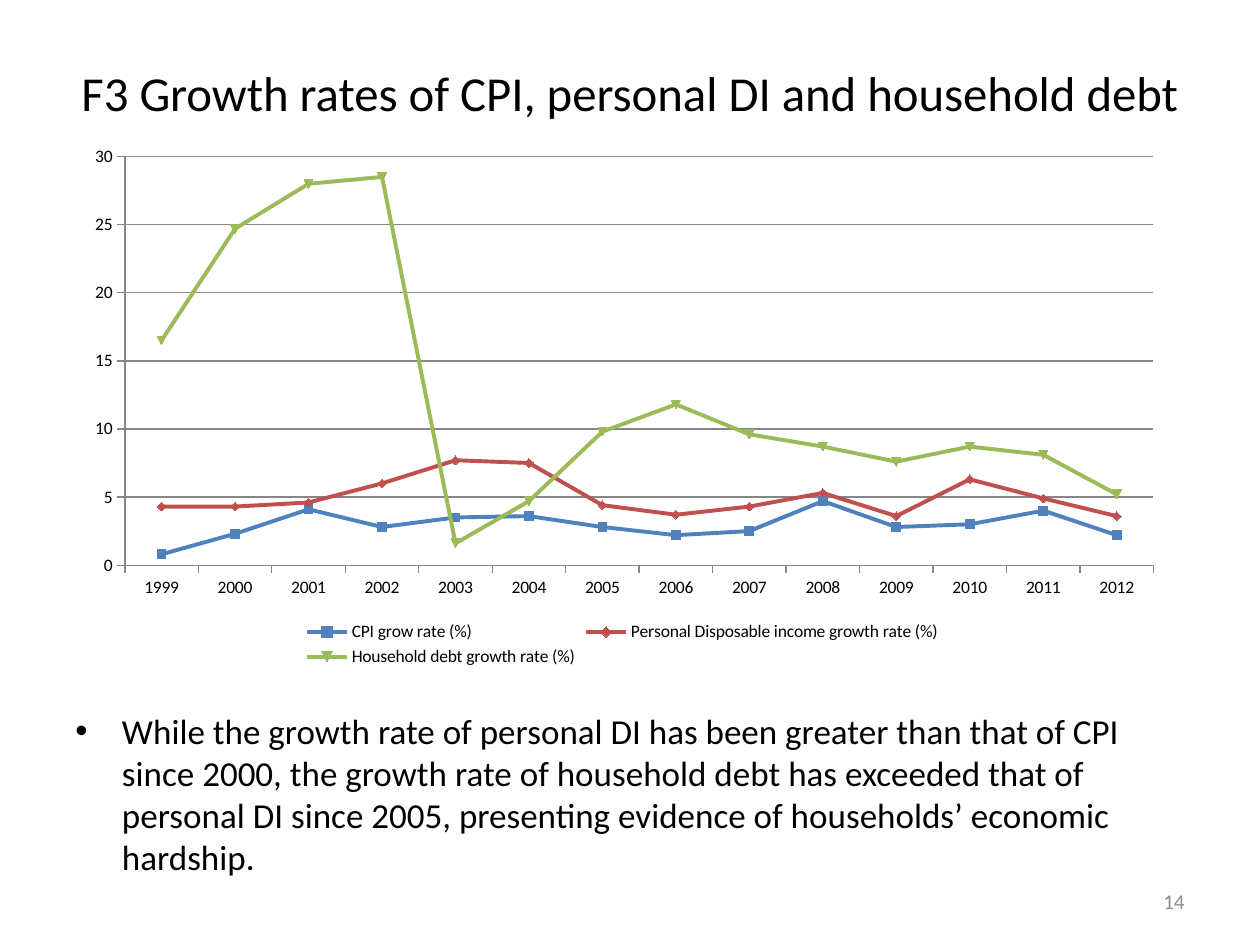
"""Build a slide with a line chart of growth rates and one bullet of comment."""
from dataclasses import dataclass

from lxml import etree
from pptx import Presentation
from pptx.chart.data import CategoryChartData
from pptx.dml.color import RGBColor
from pptx.enum.chart import XL_CHART_TYPE, XL_LEGEND_POSITION, XL_TICK_MARK
from pptx.enum.text import MSO_ANCHOR, PP_ALIGN
from pptx.oxml.ns import qn
from pptx.util import Emu, Inches, Pt

LINE_MARKERS = XL_CHART_TYPE.LINE_MARKERS
LEGEND_BOTTOM = XL_LEGEND_POSITION.BOTTOM
TICK_OUTSIDE = XL_TICK_MARK.OUTSIDE
TOP, MIDDLE = MSO_ANCHOR.TOP, MSO_ANCHOR.MIDDLE
LEFT, CENTER, RIGHT = PP_ALIGN.LEFT, PP_ALIGN.CENTER, PP_ALIGN.RIGHT
SLIDE_WIDTH, SLIDE_HEIGHT = Inches(10), Inches(7.5)


@dataclass(frozen=True)
class Theme:
    font: str = "Calibri"
    ink: str = "000000"
    muted: str = "8C8C8C"
    rule: str = "868686"
    title_size: float = 27.9
    body_size: float = 20
    number_size: float = 12
    chart_size: float = 10
    line_width: float = 2.25
    rule_width: float = 0.75
    bullet_indent: float = 0.37


@dataclass(frozen=True)
class Area:
    """A rectangle in inches on the slide."""
    left: float
    top: float
    width: float
    height: float

    def emu(self) -> tuple[Emu, Emu, Emu, Emu]:
        return (Inches(self.left), Inches(self.top),
                Inches(self.width), Inches(self.height))


@dataclass(frozen=True)
class Label:
    text: str
    area: Area
    size: float
    color: str
    align: PP_ALIGN = LEFT
    anchor: MSO_ANCHOR = TOP
    inset: float = 0.05
    bullet: bool = False


@dataclass(frozen=True)
class Rate:
    name: str
    color: str
    values: tuple[float, ...]


THEME = Theme()
CHART_AREA = Area(0.58, 1.08, 8.75, 4.25)
YEARS = [str(year) for year in range(1999, 2013)]

RATES = (
    Rate("CPI grow rate (%)", "4F81BD",
         (0.8, 2.3, 4.1, 2.8, 3.5, 3.6, 2.8, 2.2, 2.5, 4.7, 2.8, 3, 4, 2.2)),
    Rate("Personal Disposable income growth rate (%) ", "C0504D",
         (4.3, 4.3, 4.6, 6, 7.7, 7.5, 4.4, 3.7, 4.3, 5.3, 3.6, 6.3, 4.9, 3.6)),
    Rate("Household debt growth rate (%)", "9BBB59",
         (16.5, 24.7, 28, 28.5, 1.6, 4.7, 9.8, 11.8, 9.6, 8.7, 7.6, 8.7, 8.1, 5.2)),
)

LABELS = (
    Label("F3 Growth rates of CPI, personal DI and household debt",
          Area(0.5, 0.5, 9, 0.92), THEME.title_size, THEME.ink, CENTER, inset=0),
    Label("14", Area(7.17, 6.95, 2.33, 0.4), THEME.number_size, THEME.muted,
          RIGHT, MIDDLE),
    Label("While the growth rate of personal DI has been greater than that of CPI "
          "since 2000, the growth rate of household debt has exceeded that of "
          "personal DI since 2005, presenting evidence of households’ economic "
          "hardship.",
          Area(0.5, 5.58, 9, 1.75), THEME.body_size, THEME.ink, bullet=True),
)


def style_font(font, size: float, color: str) -> None:
    font.name = THEME.font
    font.size = Pt(size)
    font.color.rgb = RGBColor.from_string(color)


def style_rule(line) -> None:
    line.color.rgb = RGBColor.from_string(THEME.rule)
    line.width = Pt(THEME.rule_width)


def add_bullet(para) -> None:
    para.space_before = Pt(THEME.body_size * 0.2)
    properties = para._p.get_or_add_pPr()
    indent = Inches(THEME.bullet_indent)
    properties.set("marL", str(indent))
    properties.set("indent", str(-indent))
    etree.SubElement(properties, qn("a:buFont")).set("typeface", "Arial")
    etree.SubElement(properties, qn("a:buChar")).set("char", "•")


def draw_label(page, label: Label) -> None:
    frame = page.shapes.add_textbox(*label.area.emu()).text_frame
    frame.word_wrap = True
    frame.vertical_anchor = label.anchor
    frame.margin_top = frame.margin_bottom = Inches(label.inset)
    para = frame.paragraphs[0]
    para.text = label.text
    para.alignment = label.align
    style_font(para.font, label.size, label.color)
    if label.bullet:
        add_bullet(para)


def draw_chart(page, area: Area, rates: tuple[Rate, ...]) -> None:
    data = CategoryChartData()
    data.categories = YEARS
    for rate in rates:
        data.add_series(rate.name, rate.values)
    chart = page.shapes.add_chart(LINE_MARKERS, *area.emu(), data).chart
    chart.has_title = False
    style_font(chart.font, THEME.chart_size, THEME.ink)
    chart.has_legend = True
    chart.legend.position = LEGEND_BOTTOM
    chart.legend.include_in_layout = False
    for axis in (chart.category_axis, chart.value_axis):
        axis.major_tick_mark = TICK_OUTSIDE
        style_rule(axis.format.line)
    values = chart.value_axis
    values.minimum_scale, values.maximum_scale, values.major_unit = 0, 30, 5
    values.has_major_gridlines = True
    style_rule(values.major_gridlines.format.line)
    plot = chart.plots[0]
    plot.vary_by_categories = False
    for series, rate in zip(plot.series, rates):
        color = RGBColor.from_string(rate.color)
        series.smooth = False
        series.format.line.color.rgb = color
        series.format.line.width = Pt(THEME.line_width)
        series.marker.format.fill.solid()
        series.marker.format.fill.fore_color.rgb = color
        series.marker.format.line.color.rgb = color


def main() -> None:
    deck = Presentation()
    deck.slide_width, deck.slide_height = SLIDE_WIDTH, SLIDE_HEIGHT
    page = deck.slides.add_slide(deck.slide_layouts[6])
    draw_chart(page, CHART_AREA, RATES)
    for label in LABELS:
        draw_label(page, label)
    deck.save("out.pptx")


if __name__ == "__main__":
    main()
